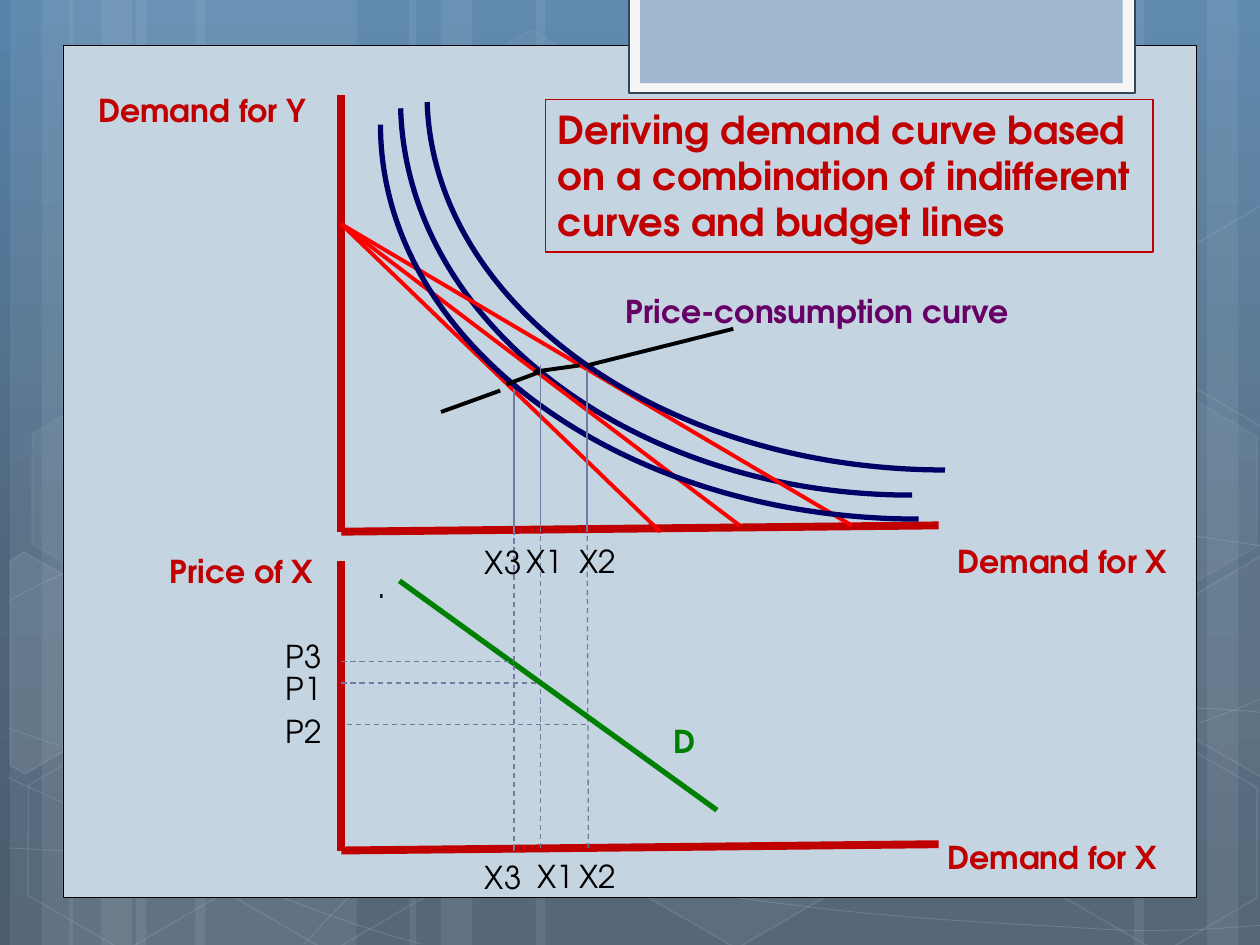
from copy import deepcopy
from math import cos, radians, sin

from lxml import etree
from pptx import Presentation
from pptx.dml.color import RGBColor
from pptx.enum.dml import MSO_LINE
from pptx.enum.shapes import MSO_CONNECTOR, MSO_SHAPE
from pptx.enum.text import MSO_AUTO_SIZE
from pptx.oxml.ns import qn
from pptx.util import Inches, Pt

RECT, HEXAGON = MSO_SHAPE.RECTANGLE, MSO_SHAPE.HEXAGON
STRAIGHT, DASH = MSO_CONNECTOR.STRAIGHT, MSO_LINE.DASH
FIT = MSO_AUTO_SIZE.SHAPE_TO_FIT_TEXT
FONT = "TeX Gyre Adventor"
MIST = RGBColor(0xC5, 0xD4, 0xE1)
SKY = RGBColor(0x55, 0x83, 0xAA)
SLATE = RGBColor(0x50, 0x66, 0x7B)
STEEL = RGBColor(0x4A, 0x5C, 0x6D)
WHITE = RGBColor(0xF5, 0xF5, 0xF5)
TAB_BLUE = RGBColor(0x9F, 0xB8, 0xCD)
TAB_EDGE = RGBColor(0x2F, 0x46, 0x59)
BLACK = RGBColor(0, 0, 0)
CRIMSON = RGBColor(0xC0, 0, 0)
RED = RGBColor(0xFF, 0, 0)
NAVY = RGBColor(0, 0, 0x66)
PURPLE = RGBColor(0x66, 0, 0x66)
GREEN = RGBColor(0, 0x80, 0)
GUIDE = RGBColor(0x72, 0x7C, 0xA3)

# The slide is a grid of 10 columns and 7.5 rows of square cells
CELL = Inches(1)
COLS, ROWS = 10, 7.5

prs = Presentation()
prs.slide_width, prs.slide_height = int(COLS * CELL), int(ROWS * CELL)
s = prs.slides.add_slide(prs.slide_layouts[6])


def paint(sp, fill=None, fill_alpha=100, line=None, width=1, line_alpha=100, dash=False):
    """Set fill, line and opacity (percent) of a shape or connector, without shadow."""
    spPr = sp.element.spPr
    if fill is not None:
        sp.fill.solid()
        sp.fill.fore_color.rgb = fill
    elif hasattr(sp, "fill"):
        sp.fill.background()
    if line is None:
        sp.line.fill.background()
    else:
        sp.line.color.rgb = line
        sp.line.width = Pt(width)
        if dash:
            sp.line.dash_style = DASH
    for place, alpha in (("a:solidFill", fill_alpha), ("a:ln/a:solidFill", line_alpha)):
        for colour in spPr.xpath(place + "/a:srgbClr"):
            if alpha < 100:
                etree.SubElement(colour, qn("a:alpha")).set("val", str(alpha * 1000))
    if hasattr(sp, "shadow"):
        sp.shadow.inherit = False
    else:
        etree.SubElement(spPr, qn("a:effectLst"))


def text(words, x, y, w, h=0.4, size=18, colour=BLACK, bold=False, wrap=False):
    sp = s.shapes.add_textbox(*(int(v * CELL) for v in (x, y, w, h)))
    tf = sp.text_frame
    tf.word_wrap, tf.auto_size = wrap, FIT
    r = tf.paragraphs[0].add_run()
    r.text = words
    r.font.name, r.font.size, r.font.bold = FONT, Pt(size), bold
    r.font.color.rgb = colour
    return sp


# Background gradient
bg = s.background.fill
bg.gradient()
bg.gradient_angle = 270
stops = bg.gradient_stops[0]._gs.getparent()
stops.insert(1, deepcopy(stops[0]))
for stop, position, colour in zip(bg.gradient_stops, (0, 0.62, 1), (SKY, SLATE, STEEL)):
    stop.position, stop.color.rgb = position, colour

# Vertical bands: left, width
for x, w in ((1.08, 1.75), (0.08, 0.5), (0.33, 0.83), (1.55, 1.75), (0.55, 0.5), (0.8, 0.83),
             (7.33, 1.75), (9.58, 0.5), (9, 0.83), (4.25, 3.08), (3.25, 0.5), (3.5, 0.83)):
    paint(s.shapes.add_shape(RECT, int(x * CELL), 0, int(w * CELL), prs.slide_height), MIST, 10)

# Bezier chains: start, then two handles and an end per segment
waves = [
    [(0.07, 6.73), (0.61, 6.76), (1.15, 6.79), (1.9, 6.78), (2.65, 6.77), (3.58, 6.75), (4.58, 6.65),
     (5.58, 6.55), (7, 6.36), (7.92, 6.17), (8.83, 5.98), (9.77, 5.68), (10.07, 5.51)],
    [(0.07, 4.77), (0.36, 4.61), (0.65, 4.46), (1.21, 4.31), (1.78, 4.16), (2.59, 3.94), (3.47, 3.87),
     (4.36, 3.8), (5.44, 3.79), (6.54, 3.87), (7.64, 3.95), (9.47, 4.26), (10.07, 4.34)],
    [(0.06, 6.17), (1.27, 6.72), (2.47, 7.27), (3.34, 7.49)],
    [(0.07, 5.78), (0.38, 5.89), (0.7, 6), (1.28, 6.16), (1.86, 6.31), (2.73, 6.56), (3.57, 6.73),
     (4.4, 6.9), (5.45, 7.08), (6.28, 7.18), (7.11, 7.29), (8, 7.33), (8.53, 7.36),
     (9.05, 7.4), (9.19, 7.38), (9.45, 7.38), (9.71, 7.37), (9.89, 7.35), (10.07, 7.34)],
    [(2.42, 7.49), (2.6, 7.29), (2.78, 7.09), (3.02, 6.91), (3.26, 6.73), (3.6, 6.53), (3.88, 6.39),
     (4.16, 6.25), (4.33, 6.19), (4.7, 6.09), (5.06, 5.99), (5.73, 5.85), (6.08, 5.78),
     (6.44, 5.71), (6.49, 5.71), (6.8, 5.69), (7.11, 5.66), (7.6, 5.63), (7.94, 5.62),
     (8.29, 5.61), (8.86, 5.62), (8.86, 5.62), (9.08, 5.62), (9.31, 5.62), (9.53, 5.62),
     (9.71, 5.63), (9.88, 5.64), (9.97, 5.65), (10.06, 5.66), (10.03, 5.65), (10.06, 5.66)],
]
middle = [(7.24, 3.93), (5.03, 3.93), (3.23, 2.57), (3.18, 0.86)]
lower = [(7.29, 4.12), (4.93, 4.12), (3.02, 2.72), (3.02, 0.99)]
upper = [(7.5, 3.73), (5.27, 3.73), (3.44, 2.43), (3.39, 0.81)]
curves = []

for wave in waves:
    start, *rest = [(x * CELL, y * CELL) for x, y in wave]
    fb = s.shapes.build_freeform(*start)
    fb.add_line_segments(rest, close=False)
    curves.append(fb.convert_to_shape())
    paint(curves[-1], line=MIST, width=0.5, line_alpha=20)

# Honeycomb: left, top, fill opacity, line opacity
TILT = 30
for x, y, fill_alpha, line_alpha in (
        (3.34, 0.36, 4, 8), (4.97, 5.89, 6, 12), (0.11, 5.91, 0, 12), (0.14, 3.12, 7, 8),
        (1.74, 5.92, 0, 12), (7.53, 4.53, 10, 12), (8.34, 5.93, 0, 12), (8.34, 3.14, 7, 8)):
    sp = s.shapes.add_shape(HEXAGON, *(int(v * CELL) for v in (x, y, 1.75, 1.52)))
    sp.adjustments[0], sp.adjustments[1] = 0.285, 1.155
    sp.rotation = TILT
    paint(sp, MIST if fill_alpha else None, fill_alpha, MIST, 1, line_alpha)

# Hexagons cut by the slide's edges: centre, corners as they stand, fill opacity.
# Corners are turned back by the tilt, which the shape's rotation then restores.
c, d = cos(radians(TILT)), sin(radians(TILT))
for (cx, cy), corners, fill_alpha in (
        ((0.36, 5.35), [(0.08, 4.45), (0.19, 4.38), (0.96, 4.82),
                        (0.95, 5.7), (0.2, 6.14), (0.08, 6.07)], 10),
        ((9.85, 5.2), [(9.26, 4.85), (10.01, 4.41), (10.09, 4.46),
                       (10.09, 6.13), (10.02, 6.17), (9.26, 5.73)], 4),
        ((9.85, 2.41), [(9.26, 2.07), (10.01, 1.63), (10.1, 1.68),
                        (10.09, 3.35), (10.02, 3.39), (9.26, 2.95)], 0)):
    start, *rest = [((cx + (x - cx) * c + (y - cy) * d) * CELL,
                     (cy - (x - cx) * d + (y - cy) * c) * CELL) for x, y in corners]
    fb = s.shapes.build_freeform(*start)
    fb.add_line_segments(rest, close=True)
    sp = fb.convert_to_shape()
    sp.rotation = TILT
    paint(sp, MIST if fill_alpha else None, fill_alpha, MIST, 1, 12)

# Panel and the tab at its top
for box, fill, line, width in (((0.5, 0.36, 9, 6.76), MIST, BLACK, 0.5),
                               ((4.99, -0.02, 4.02, 0.76), WHITE, TAB_EDGE, 1.25),
                               ((5.08, -0.02, 3.83, 0.68), TAB_BLUE, None, 1)):
    paint(s.shapes.add_shape(RECT, *(int(v * CELL) for v in box)), fill, line=line, width=width)

# Both diagrams: points, colour, width, dashed
AXIS, X3, X1, X2 = 2.71, 4.08, 4.29, 4.66
TOP = (AXIS, 1.78)
for points, colour, width, dash in (
        ([(AXIS, 0.75), (AXIS, 4.22)], CRIMSON, 4.5, False),
        ([(AXIS, 4.22), (7.45, 4.17)], CRIMSON, 4.5, False),
        (middle, NAVY, 3, False),
        ([TOP, (5.24, 4.22)], RED, 2.25, False),
        ([TOP, (5.87, 4.17)], RED, 2.25, False),
        ([TOP, (6.76, 4.17)], RED, 2.25, False),
        (lower, NAVY, 3, False),
        (upper, NAVY, 3, False),
        ([(4.02, 3.05), (X1, 2.95)], BLACK, 2.25, False),
        ([(4.24, 2.95), (4.6, 2.9)], BLACK, 2.25, False),
        ([(3.5, 3.27), (3.97, 3.1)], BLACK, 2.25, False),
        ([(X2, 2.9), (5.82, 2.61)], BLACK, 2.25, False),
        ([(AXIS, 4.45), (AXIS, 6.75)], CRIMSON, 4.5, False),
        ([(AXIS, 6.75), (7.45, 6.7)], CRIMSON, 4.5, False),
        ([(X1, 4.17), (X1, 2.9)], GUIDE, 0.75, False),
        ([(X2, 4.22), (X2, 2.94)], GUIDE, 0.75, False),
        ([(X1, 6.73), (X1, 4.17)], GUIDE, 0.75, True),
        ([(4.67, 6.73), (X2, 4.25)], GUIDE, 0.75, True),
        ([(AXIS, 5.42), (X1, 5.42)], GUIDE, 0.75, True),
        ([(2.75, 5.75), (X2, 5.75)], GUIDE, 0.75, True),
        ([(3.17, 4.61), (5.69, 6.43)], GREEN, 3, False),
        ([(X3, 4.2), (X3, 3.09)], GUIDE, 0.75, False),
        ([(X3, 6.75), (X3, 4.2)], GUIDE, 0.75, True),
        ([(AXIS, 5.25), (X3, 5.25)], GUIDE, 0.75, True)):
    start, *rest = [(int(x * CELL), int(y * CELL)) for x, y in points]
    if len(rest) == 1:
        sp = s.shapes.add_connector(STRAIGHT, *start, *rest[0])
    else:
        fb = s.shapes.build_freeform(*start)
        fb.add_line_segments(rest, close=False)
        sp = fb.convert_to_shape()
        curves.append(sp)
    paint(sp, line=colour, width=width, dash=dash)

# Join each three points of a chain into one Bezier segment
for sp in curves:
    corners = sp.element.xpath(".//a:lnTo")
    for i in range(0, len(corners), 3):
        bezier = etree.Element(qn("a:cubicBezTo"))
        corners[i].addprevious(bezier)
        for corner in corners[i:i + 3]:
            bezier.append(corner[0])
            corner.getparent().remove(corner)

# Labels
text(".", 2.9, 4.45, 0.25, 0.3)
for words, x, y, w, colour in (("Price-consumption curve", 4.87, 2.27, 3.27, PURPLE),
                               ("Demand for X", 7.5, 4.25, 1.9, CRIMSON),
                               ("Demand for Y", 0.68, 0.67, 1.9, CRIMSON),
                               ("Demand for X", 7.42, 6.6, 1.9, CRIMSON),
                               ("Price of X", 1.25, 4.33, 1.34, CRIMSON),
                               ("D", 5.25, 5.68, 0.39, GREEN)):
    text(words, x, y, w, colour=colour, bold=True)
for y, x1 in ((4.25, X3), (6.75, 4.17)):
    text("X1", x1, y, 0.5)
    text("X2", 4.5, y, 0.5)
    text("X3", 3.75, y + 0.01, 0.5)
for words, y in (("P1", 5.26), ("P3", 5.01), ("P2", 5.6)):
    text(words, 2.17, y, 0.49)
title = text("Deriving demand curve based on a combination of indifferent curves and budget lines",
             4.33, 0.79, 4.82, 1.21, size=22, colour=CRIMSON, bold=True, wrap=True)
paint(title, line=CRIMSON, width=1)

prs.save("out.pptx")
